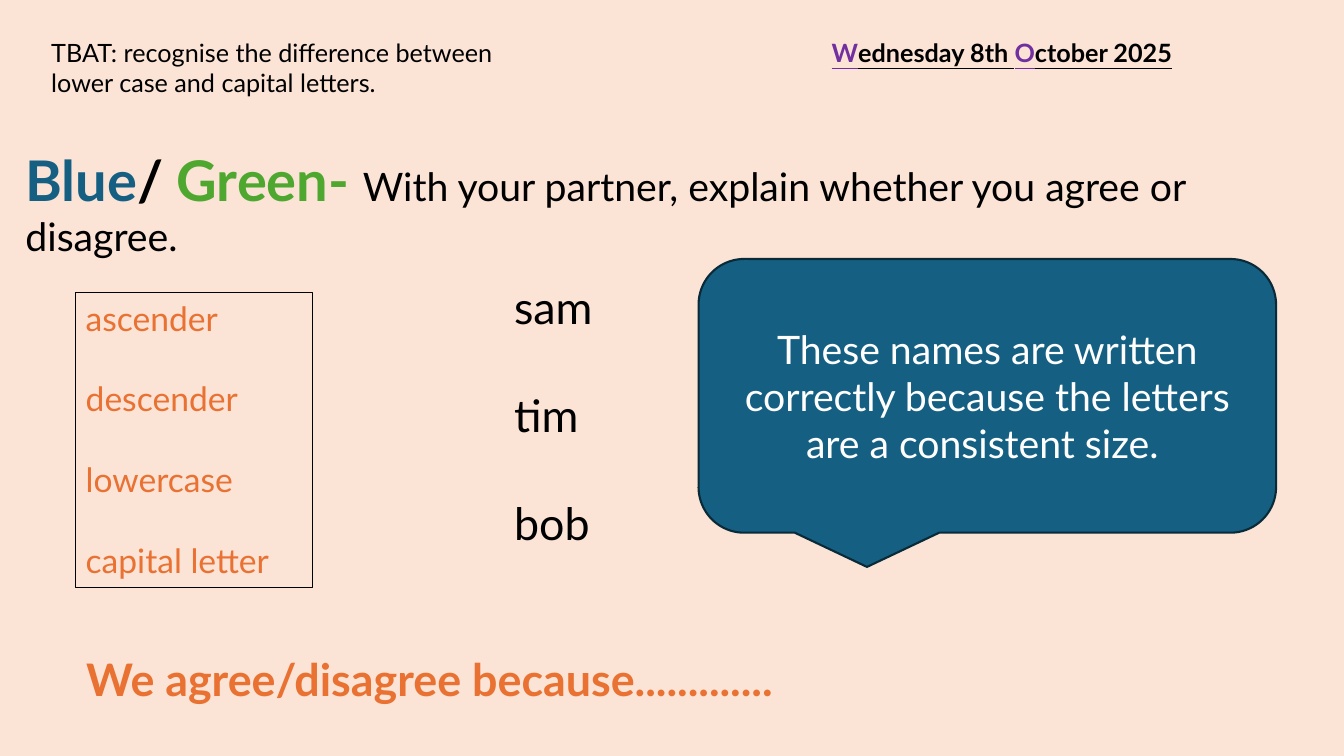
from lxml.etree import SubElement
from pptx import Presentation
from pptx.dml.color import RGBColor
from pptx.enum.shapes import MSO_SHAPE
from pptx.enum.text import MSO_ANCHOR, MSO_AUTO_SIZE, PP_ALIGN
from pptx.oxml.ns import qn
from pptx.util import Pt

COLORS = {
    "peach": "FBE3D6",
    "black": "000000",
    "white": "FFFFFF",
    "blue": "156082",
    "navy": "092A39",
    "green": "4EA72E",
    "purple": "7030A0",
    "orange": "E97132",
}


def rgb(name):
    return RGBColor.from_string(COLORS[name])


def write(frame, paragraphs, size=18, color="black", bold=False, underline=False,
          align=PP_ALIGN.LEFT, anchor=MSO_ANCHOR.TOP, gap=0):
    """Fill a frame; a paragraph is a string or a list of (text, overrides) runs."""
    frame.word_wrap = True
    frame.auto_size = MSO_AUTO_SIZE.NONE
    frame.vertical_anchor = anchor
    for index, content in enumerate(paragraphs):
        paragraph = frame.add_paragraph() if index else frame.paragraphs[0]
        paragraph.alignment = align
        paragraph.space_before = Pt(gap if index else 0)
        runs = [(content, {})] if isinstance(content, str) else content
        for text, overrides in runs:
            style = {"size": size, "color": color, "bold": bold} | overrides
            run = paragraph.add_run()
            run.text = text
            run.font.name = "Lato"
            run.font.size = Pt(style["size"])
            run.font.bold = style["bold"]
            run.font.underline = underline
            run.font.color.rgb = rgb(style["color"])


class Lesson:
    """Holds the deck, its current slide and the shared look."""

    def __init__(self, width, height, background):
        self.deck = Presentation()
        self.deck.slide_width, self.deck.slide_height = Pt(width), Pt(height)
        self.slide = self.deck.slides.add_slide(self.deck.slide_layouts[3])
        self.slide.background.fill.solid()
        self.slide.background.fill.fore_color.rgb = rgb(background)

    def place(self, holder, box):
        holder.left, holder.top, holder.width, holder.height = map(Pt, box)

    def title(self, box, runs, **style):
        heading = self.slide.shapes.title
        self.place(heading, box)
        write(heading.text_frame, [runs], **style)

    def word_list(self, index, box, words, size, outline=None, **style):
        """Plain list in a body placeholder, with one empty line's height between words."""
        body = self.slide.placeholders[index]
        self.place(body, box)
        write(body.text_frame, words, size=size, gap=1.2 * size, **style)
        for paragraph in body.text_frame.paragraphs:
            properties = paragraph._p.get_or_add_pPr()
            properties.set("marL", "0")
            properties.set("indent", "0")
            SubElement(properties, qn("a:buNone"))
        if outline:
            body.line.color.rgb = rgb(outline)
            body.line.width = Pt(0.75)

    def note(self, box, content, **style):
        write(self.slide.shapes.add_textbox(*map(Pt, box)).text_frame, [content], **style)

    def speech_bubble(self, box, speech, fill, outline, **style):
        bubble = self.slide.shapes.add_shape(MSO_SHAPE.ROUNDED_RECTANGULAR_CALLOUT, *map(Pt, box))
        bubble.shadow.inherit = False
        bubble.fill.solid()
        bubble.fill.fore_color.rgb = rgb(fill)
        bubble.line.color.rgb = rgb(outline)
        bubble.line.width = Pt(1.5)
        write(bubble.text_frame, [speech], align=PP_ALIGN.CENTER,
              anchor=MSO_ANCHOR.MIDDLE, **style)


def main():
    lesson = Lesson(960, 540, "peach")
    lesson.note((29.5, 23, 335.5, 51),
                "TBAT: recognise the difference between lower case and capital letters.")
    capital = {"color": "purple"}
    lesson.note((587, 23, 337, 29),
                [("W", capital), ("ednesday 8th ", {}), ("O", capital), ("ctober 2025", {})],
                bold=True, underline=True)
    lesson.title((11, 100, 947.5, 55.5), [
        ("Blue", {"color": "blue"}),
        ("/ ", {}),
        ("Green- ", {"color": "green"}),
        ("With your partner, explain whether you agree or disagree.",
         {"size": 28, "bold": False}),
    ], size=40, bold=True)
    lesson.word_list(1, (54, 209, 169.5, 211),
                     ["ascender", "descender", "lowercase", "capital letter"],
                     size=24, color="orange", outline="black")
    lesson.word_list(2, (360, 196.5, 395.5, 223), ["sam", "tim", "bob"], size=32)
    lesson.speech_bubble((499, 185, 412.5, 195.5),
                         "These names are written correctly because the letters "
                         "are a consistent size. ",
                         fill="blue", outline="navy", size=28, color="white")
    lesson.note((54.5, 462, 798, 46), "We agree/disagree because.............",
                size=32, color="orange", bold=True)
    lesson.deck.save("out.pptx")


if __name__ == "__main__":
    main()
